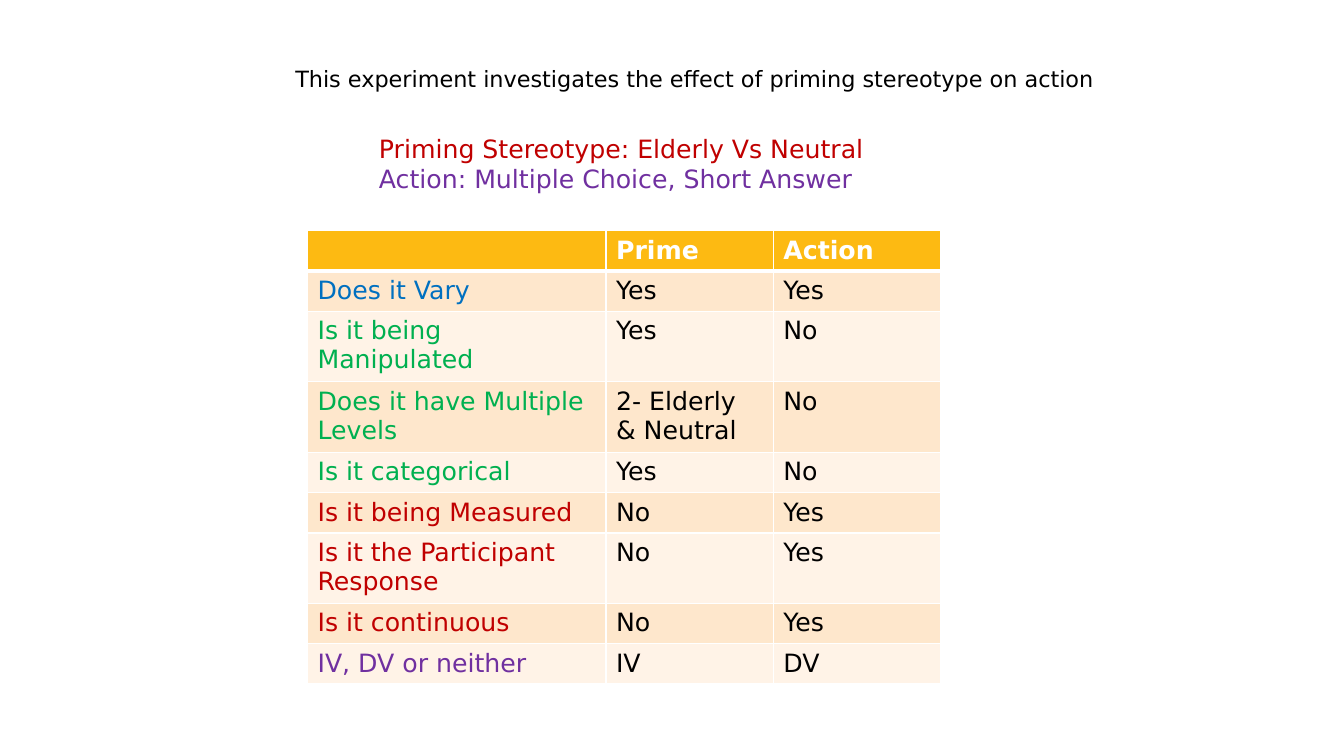
from lxml.etree import SubElement
from pptx import Presentation
from pptx.dml.color import RGBColor
from pptx.oxml.ns import qn
from pptx.util import Inches, Pt

WHITE = RGBColor(0xFF, 0xFF, 0xFF)
BLACK = RGBColor(0x00, 0x00, 0x00)
GOLD = RGBColor(0xFD, 0xBA, 0x12)
PEACH = RGBColor(0xFE, 0xE7, 0xCC)
CREAM = RGBColor(0xFF, 0xF3, 0xE7)
BLUE = RGBColor(0x00, 0x70, 0xC0)
GREEN = RGBColor(0x00, 0xB0, 0x50)
RED = RGBColor(0xC0, 0x00, 0x00)
PURPLE = RGBColor(0x70, 0x30, 0xA0)

FONT = "DejaVu Sans"
WIDE, HIGH = Inches(13.33), Inches(7.5)
COLS = (22.21, 12.45, 12.45)
LINE, TWO_LINE = 5.33, 9.33
HEADER = ("", "Prime", "Action")
ROWS = (
    (BLUE, LINE, "Does it Vary", "Yes", "Yes"),
    (GREEN, TWO_LINE, "Is it being Manipulated", "Yes", "No"),
    (GREEN, TWO_LINE, "Does it have Multiple Levels", "2- Elderly & Neutral", "No"),
    (GREEN, LINE, "Is it categorical", "Yes", "No"),
    (RED, LINE, "Is it being Measured", "No", "Yes"),
    (RED, TWO_LINE, "Is it the Participant Response", "No", "Yes"),
    (RED, LINE, "Is it continuous", "No", "Yes"),
    (PURPLE, LINE, "IV, DV or neither", "IV", "DV"),
)


def across(share):
    """Turn a percentage of the slide's width into a length."""
    return round(WIDE * share / 100)


def down(share):
    """Turn a percentage of the slide's height into a length."""
    return round(HIGH * share / 100)


def write(para, text, color, size=18, bold=False):
    """Put styled text into a paragraph."""
    para.text = text
    font = para.font
    font.name, font.size, font.bold = FONT, Pt(size), bold
    font.color.rgb = color


def add_text(slide, left, top, width, height, lines, size):
    """Add a text box with one paragraph per coloured line."""
    box = slide.shapes.add_textbox(across(left), down(top), across(width), down(height))
    frame = box.text_frame
    frame.word_wrap = True
    for index, (text, color) in enumerate(lines):
        para = frame.add_paragraph() if index else frame.paragraphs[0]
        write(para, text, color, size)


def add_rules(cell, top, bottom):
    """Draw white rules of the given weights around a cell."""
    props = cell._tc.get_or_add_tcPr()
    for side, weight in (("L", 1), ("R", 1), ("T", top), ("B", bottom)):
        rule = SubElement(props, qn("a:ln" + side), w=str(Pt(weight)))
        fill = SubElement(rule, qn("a:solidFill"))
        SubElement(fill, qn("a:srgbClr"), val=str(WHITE))


def fill_row(table, row, height, texts, colors, fill):
    """Fill and style one row of the table."""
    table.rows[row].height = down(height)
    for cell, text, color in zip(table.rows[row].cells, texts, colors):
        write(cell.text_frame.paragraphs[0], text, color, bold=row == 0)
        add_rules(cell, 3 if row == 1 else 1, 3 if row == 0 else 1)
        cell.fill.solid()
        cell.fill.fore_color.rgb = fill


def add_grid(slide, left, top):
    """Add the table that compares prime and action."""
    height = LINE + sum(row[1] for row in ROWS)
    frame = slide.shapes.add_table(
        len(ROWS) + 1, len(COLS), across(left), down(top), across(sum(COLS)), down(height)
    )
    table = frame.table
    for column, width in zip(table.columns, COLS):
        column.width = across(width)
    fill_row(table, 0, LINE, HEADER, (WHITE,) * 3, GOLD)
    for row, (color, size, *texts) in enumerate(ROWS, 1):
        fill = PEACH if row % 2 else CREAM
        fill_row(table, row, size, texts, (color, BLACK, BLACK), fill)


def main():
    """Build and save the slide."""
    deck = Presentation()
    deck.slide_width, deck.slide_height = WIDE, HIGH
    slide = deck.slides.add_slide(deck.slide_layouts[6])
    add_grid(slide, 22.88, 30.53)
    factors = (
        ("Priming Stereotype: Elderly Vs Neutral", RED),
        ("Action: Multiple Choice, Short Answer", PURPLE),
    )
    add_text(slide, 27.46, 16.93, 48.09, 9.47, factors, 18)
    topic = "This experiment investigates the effect of priming stereotype on action"
    add_text(slide, 21.23, 8, 76.74, 4.93, ((topic, BLACK),), 16)
    deck.save("out.pptx")


if __name__ == "__main__":
    main()
